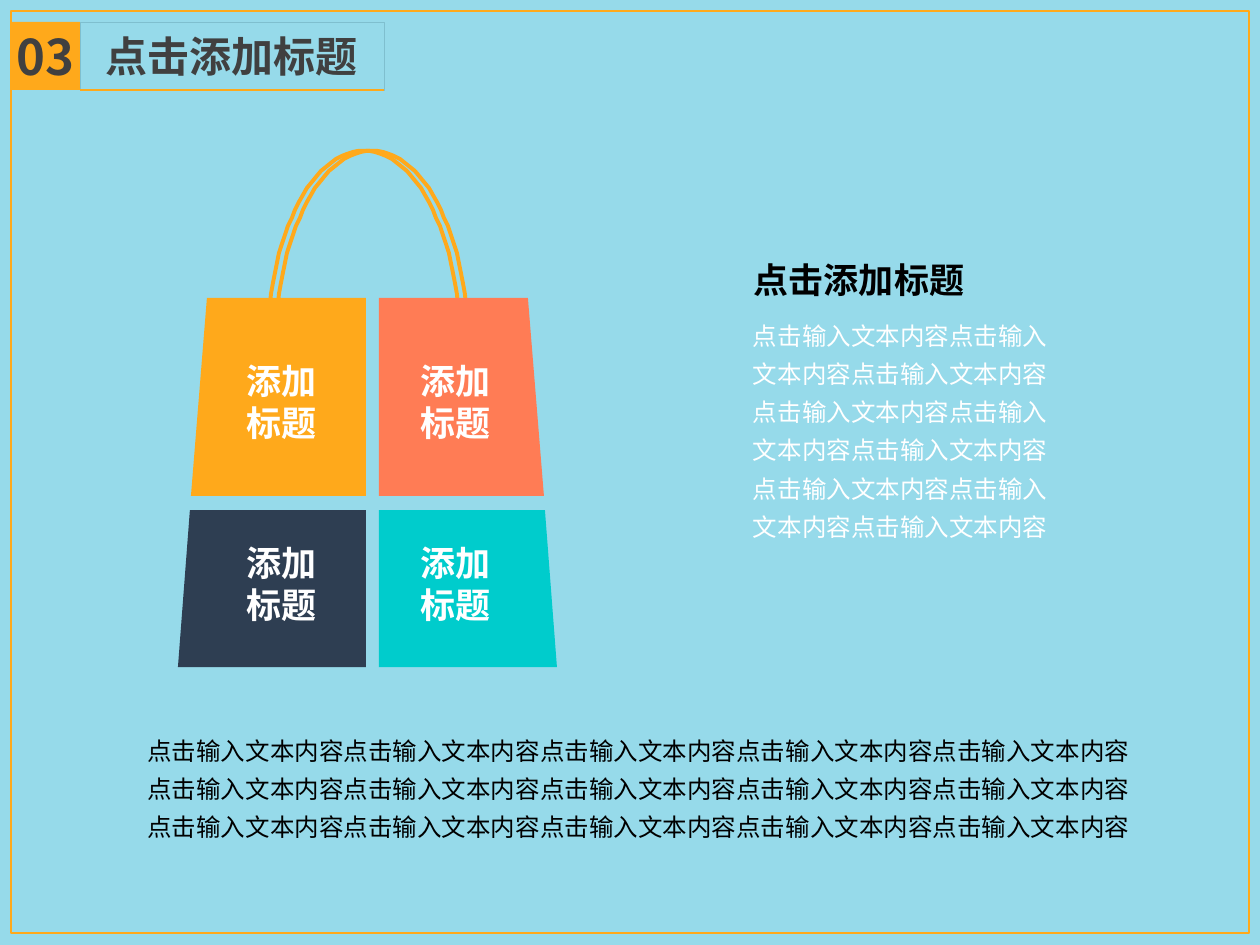
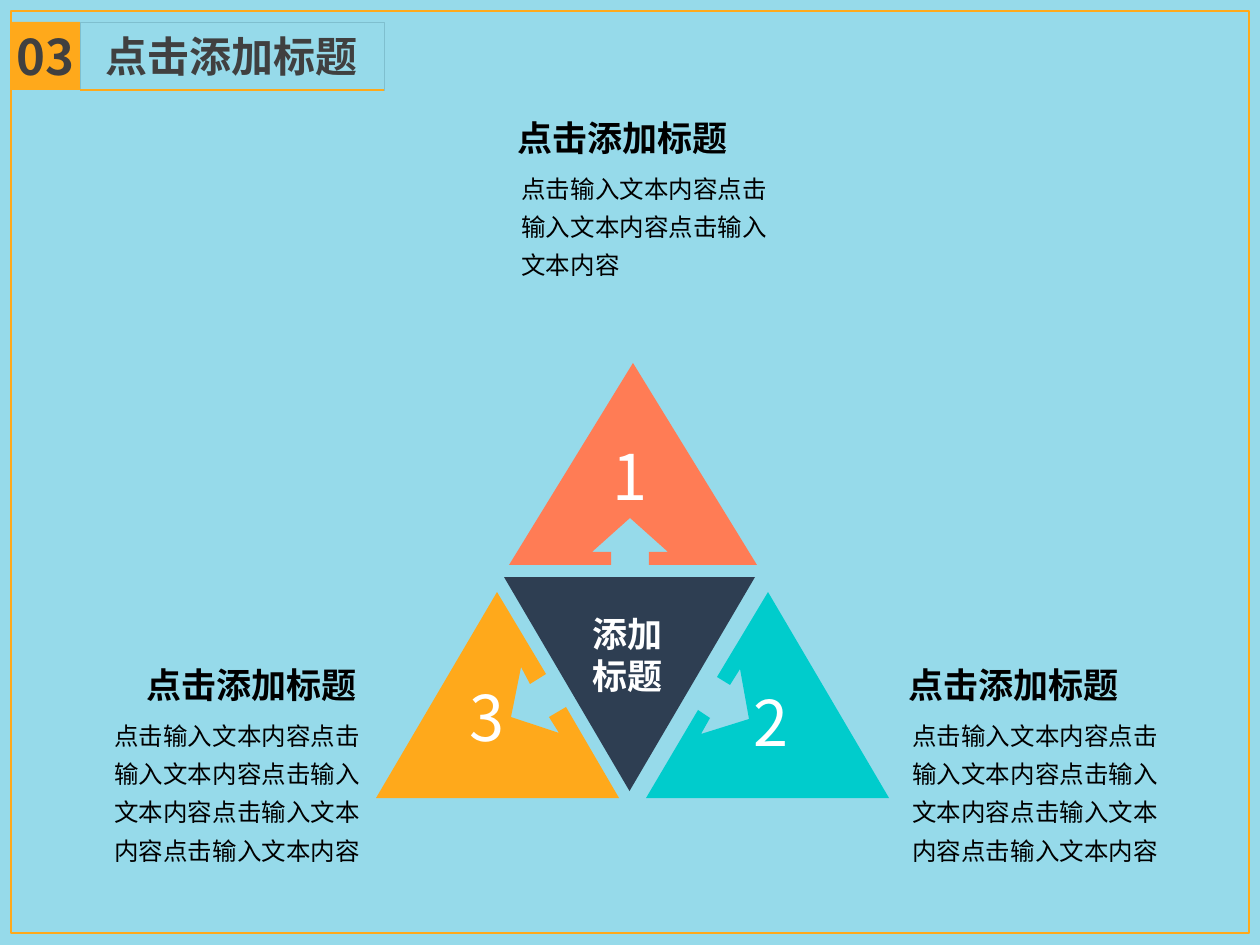
from lxml.etree import SubElement
from pptx import Presentation
from pptx.dml.color import RGBColor
from pptx.enum.shapes import MSO_CONNECTOR as CONNECTOR, MSO_SHAPE as SHAPE
from pptx.enum.text import MSO_ANCHOR as ANCHOR, PP_ALIGN as ALIGN
from pptx.oxml.ns import qn
from pptx.util import Pt

PX = 914400 / 126
FONT = "Noto Sans CJK SC"
SKY, ORANGE, CORAL = "96DAEA", "FFA91B", "FF7C55"
NAVY, TEAL, HAIRLINE = "2E3E52", "00CCCC", "7FBFCF"
GREY, BLACK, WHITE = "404040", "000000", "FFFFFF"

HEADING = "点击添加标题"
FILLER = "点击输入文本内容"
LABEL = "添加\n标题"


def px(length):
    return round(length * PX)


def color(value):
    return RGBColor.from_string(value)


def style(shape, fill=None, line=None, weight=1):
    shape.shadow.inherit = False
    if fill:
        shape.fill.solid()
        shape.fill.fore_color.rgb = color(fill)
    else:
        shape.fill.background()
    if line:
        shape.line.color.rgb = color(line)
        shape.line.width = Pt(weight)
    else:
        shape.line.fill.background()
    return shape


def add_preset(page, preset, box, **look):
    return style(page.shapes.add_shape(preset, *map(px, box)), **look)


def add_outline(page, points, left=0, top=0, close=True, **look):
    moved = [(left + x, top + y) for x, y in points]
    builder = page.shapes.build_freeform(*moved[0], scale=PX)
    builder.add_line_segments(moved[1:], close=close)
    return style(builder.convert_to_shape(), **look)


def write(shape, text, size=14, ink=BLACK, bold=False, align=ALIGN.LEFT,
          anchor=ANCHOR.TOP, spacing=None, inset=True, wrap=True):
    frame = shape.text_frame
    frame.word_wrap = wrap
    frame.vertical_anchor = anchor
    if not inset:
        frame.margin_left = frame.margin_right = 0
        frame.margin_top = frame.margin_bottom = 0
    for index, words in enumerate(text.split("\n")):
        para = frame.add_paragraph() if index else frame.paragraphs[0]
        para.alignment = align
        if spacing:
            para.line_spacing = spacing
        span = para.add_run()
        span.text = words
        span.font.size = Pt(size)
        span.font.bold = bold
        span.font.color.rgb = color(ink)
        span.font.name = FONT
        SubElement(span.font._element, qn("a:ea"), typeface=FONT)


def add_text(page, box, text, **look):
    write(page.shapes.add_textbox(*map(px, box)), text, **look)


def add_heading(page, box, **look):
    add_text(page, box, HEADING, size=20, bold=True, align=ALIGN.CENTER, **look)


def add_body(page, box, repeats, **look):
    add_text(page, box, FILLER * repeats, spacing=1.3, **look)


def add_rule(page, left, right, y):
    rule = page.shapes.add_connector(
        CONNECTOR.STRAIGHT, px(left), px(y), px(right), px(y))
    rule.line.color.rgb = color(ORANGE)
    rule.line.width = Pt(1)
    SubElement(rule._element.spPr, qn("a:effectLst"))


def add_title_band(page, left, top, height):
    badge = add_preset(page, SHAPE.RECTANGLE, (left, top, 69, height), fill=ORANGE)
    write(badge, "03", size=28, ink=GREY, bold=True, align=ALIGN.CENTER,
          anchor=ANCHOR.MIDDLE, inset=False)
    title = add_preset(page, SHAPE.RECTANGLE, (left + 69, top, 304, height),
                       line=HAIRLINE, weight=0.25)
    write(title, HEADING, size=24, ink=GREY, bold=True, align=ALIGN.CENTER,
          anchor=ANCHOR.MIDDLE)
    add_rule(page, left + 69, left + 373, top + height)


def add_page(deck):
    page = deck.slides.add_slide(deck.slide_layouts[6])
    page.background.fill.solid()
    page.background.fill.fore_color.rgb = color(SKY)
    add_preset(page, SHAPE.RECTANGLE, (11, 11, 1238, 922), line=ORANGE)
    add_title_band(page, 11, 22, 68)
    return page


def curve(start, pull_start, pull_end, end, steps=24):
    """Points along a cubic Bezier curve."""
    points = []
    for step in range(steps + 1):
        t = step / steps
        weights = ((1 - t) ** 3, 3 * t * (1 - t) ** 2, 3 * t * t * (1 - t), t ** 3)
        knots = (start, pull_start, pull_end, end)
        points.append(tuple(sum(w * knot[axis] for w, knot in zip(weights, knots))
                            for axis in (0, 1)))
    return points


def add_bag(page, left, top):
    # Two thin handles, tucked behind the panels
    rise = curve((0, 154), (9, 66), (48, 0), (94, 0))
    fall = [(188 - x, y) for x, y in reversed(rise[:-1])]
    for shift in (92, 100):
        add_outline(page, [(0, 163)] + rise + fall, left + shift, top,
                    close=False, line=ORANGE, weight=2.25)

    # Panels: outer edge at top and bottom, inner edge, top, bottom, fill
    panels = [
        (29, 13, 188, 147, 345, ORANGE),
        (350, 366, 201, 147, 345, CORAL),
        (12, 0, 188, 359, 516, NAVY),
        (367, 379, 201, 359, 516, TEAL),
    ]
    for outer_top, outer_bottom, inner, upper, lower, fill in panels:
        add_outline(page, [(outer_top, upper), (inner, upper), (inner, lower),
                           (outer_bottom, lower)], left, top, fill=fill)

    # Panel labels
    for y in (203, 385):
        for x in (44, 218):
            add_text(page, (left + x, top + y, 119, 94), LABEL, size=20, ink=WHITE,
                     bold=True, align=ALIGN.CENTER, anchor=ANCHOR.MIDDLE, inset=False)


def add_bag_page(deck):
    page = add_page(deck)
    add_heading(page, (741, 248, 236, 64), anchor=ANCHOR.MIDDLE, inset=False)
    add_body(page, (753, 312, 304, 248), 9, ink=WHITE, inset=False)
    add_bag(page, 178, 151)
    add_body(page, (135, 721, 1027, 129), 15)


def add_pyramid(page, left, top):
    # Outer triangles, each notched by an arrow
    pieces = [
        (CORAL, [(257, 0), (381, 202), (273, 202), (273, 189), (292, 189),
                 (254, 155), (216, 189), (235, 189), (235, 202), (133, 202)]),
        (TEAL, [(392, 229), (513, 435), (270, 435), (322, 347), (334, 355),
                (325, 371), (373, 356), (364, 306), (354, 322), (341, 314)]),
        (ORANGE, [(121, 229), (170, 311), (154, 321), (145, 304), (135, 354),
                  (183, 370), (173, 354), (190, 344), (243, 435), (0, 435)]),
    ]
    for fill, points in pieces:
        add_outline(page, points, left, top, fill=fill)

    # Centre
    centre = add_preset(page, SHAPE.ISOSCELES_TRIANGLE,
                        (left + 128, top + 214, 251, 214), fill=NAVY)
    centre.rotation = 180
    add_text(page, (left + 203, top + 243, 97, 97), LABEL, size=20, ink=WHITE,
             bold=True, align=ALIGN.CENTER)

    # Numbers
    for number, (x, y) in enumerate([(224, 68), (365, 314), (81, 309)], start=1):
        add_text(page, (left + x, top + y, 63, 89), str(number), size=36,
                 ink=WHITE, wrap=False)


def add_note(page, heading_left, body_left, top, repeats):
    add_heading(page, (heading_left, top, 242, 55))
    add_body(page, (body_left, top + 49, 273, 168), repeats)


def add_pyramid_page(deck):
    page = add_page(deck)
    add_pyramid(page, 376, 363)
    add_note(page, 502, 509, 110, 3)
    add_note(page, 893, 900, 657, 5)
    add_note(page, 131, 102, 657, 5)


def main():
    deck = Presentation()
    deck.slide_width, deck.slide_height = px(1260), px(945)
    add_bag_page(deck)
    add_pyramid_page(deck)
    deck.save("out.pptx")


if __name__ == "__main__":
    main()
